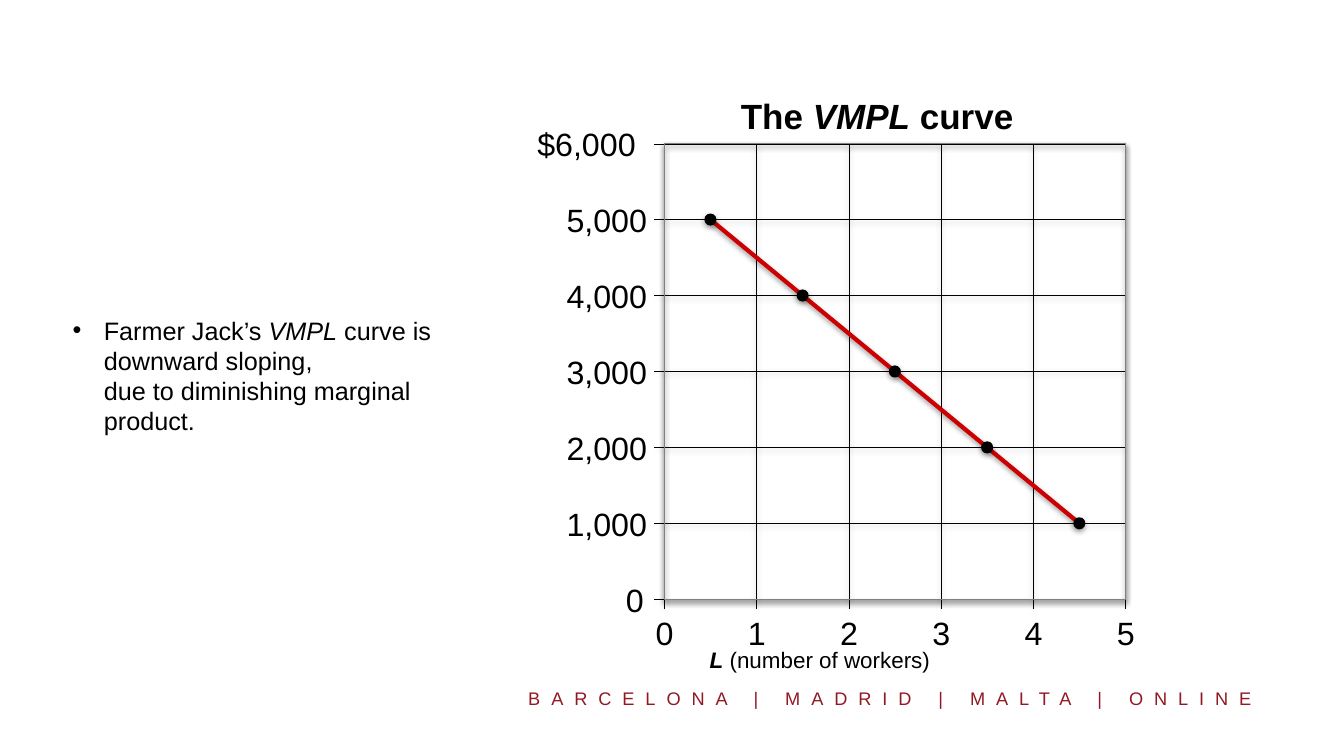
import pptx
import pptx.util
import pptx.dml.color
import pptx.enum.shapes
import pptx.enum.text
import pptx.oxml
import pptx.oxml.ns

Pt = pptx.util.Pt
SHAPE = pptx.enum.shapes.MSO_SHAPE
LEFT, TOP, WIDE, HIGH = 949, 205.2, 658.8, 650.9
COLS, ROWS, TICK, DOT = 5, 6, 14.4, 17.28

FOOT = ["BARCELONA | MADRID | MALTA | ONLINE"]
TITLE = ["The ", "*VMPL", " curve"]
AXIS = ["*L", " (number of workers)"]
NOTE = ["Farmer Jack’s ", "*VMPL", " curve is downward sloping, ", "\v",
        "due to diminishing marginal product."]
Y_TEXT = [("0", 894.2, 26.6), ("1,000", 809.3, 115.9), ("2,000", 809.3, 115.9),
          ("3,000", 809.3, 115.9), ("4,000", 809.3, 115.9),
          ("5,000", 809.3, 115.9), ("$6,000", 767.5, 157)]
X_TEXT = ["0", "1", "2", "3", "4", "5"]
DATA = [(0.5, 5000), (1.5, 4000), (2.5, 3000), (3.5, 2000), (4.5, 1000)]


def color(code):
    return pptx.dml.color.RGBColor.from_string(code)


def x_at(num):
    return LEFT + num * WIDE / COLS


def y_at(val):
    return TOP + HIGH * (1 - val / (ROWS * 1000))


def shade(item, alpha):
    props = item._element.spPr
    for old in props.findall(pptx.oxml.ns.qn("a:effectLst")):
        props.remove(old)
    props.append(pptx.oxml.parse_xml(
        f'<a:effectLst {pptx.oxml.ns.nsdecls("a")}>'
        '<a:outerShdw blurRad="101600" dist="50800" dir="5400000" rotWithShape="0">'
        f'<a:srgbClr val="000000"><a:alpha val="{alpha}000"/></a:srgbClr>'
        '</a:outerShdw></a:effectLst>'))


def line(slide, x1, y1, x2, y2, code="000000", width=0.25):
    item = slide.shapes.add_connector(
        pptx.enum.shapes.MSO_CONNECTOR.STRAIGHT, Pt(x1), Pt(y1), Pt(x2), Pt(y2))
    item.line.color.rgb = color(code)
    item.line.width = Pt(width)
    shade(item, 38)


def shape(slide, kind, x, y, w, h, fill=None, edge=None):
    item = slide.shapes.add_shape(kind, Pt(x), Pt(y), Pt(w), Pt(h))
    if fill:
        item.fill.solid()
        item.fill.fore_color.rgb = color(fill)
    else:
        item.fill.background()
    if edge:
        item.line.color.rgb = color(edge)
        item.line.width = Pt(2)
    else:
        item.line.fill.background()
    shade(item, 35)


def place(item, x, y, w, h):
    item.left, item.top, item.width, item.height = Pt(x), Pt(y), Pt(w), Pt(h)


def write(item, parts, size, bold=False, code="000000", pad=9.4, wrap=True):
    frame = item.text_frame
    frame.word_wrap = wrap
    frame.auto_size = pptx.enum.text.MSO_AUTO_SIZE.NONE
    frame.vertical_anchor = pptx.enum.text.MSO_ANCHOR.TOP
    frame.margin_left = frame.margin_right = Pt(pad)
    frame.margin_top = frame.margin_bottom = Pt(pad)
    para = frame.paragraphs[0]
    para.alignment = pptx.enum.text.PP_ALIGN.LEFT
    para.space_before = Pt(0)
    for part in parts:
        if part == "\v":
            para.add_line_break()
            continue
        run = para.add_run()
        run.text = part.lstrip("*")
        font = run.font
        font.name, font.size, font.bold = "Arial", Pt(size), bold
        font.italic = part.startswith("*")
        font.color.rgb = color(code)
    return para


def label(slide, text, x, y, w):
    box = slide.shapes.add_textbox(Pt(x), Pt(y), Pt(w), Pt(52.6))
    write(box, [text], 46, pad=0, wrap=False)


def grid(slide):
    shape(slide, SHAPE.RECTANGLE, LEFT, TOP, WIDE, HIGH, fill="FFFFFF")
    base, end = TOP + HIGH, LEFT + WIDE
    for row in range(ROWS + 1):
        y = y_at(row * 1000)
        line(slide, LEFT, y, end, y)
        line(slide, LEFT - TICK, y, LEFT, y)
    for col in range(COLS + 1):
        x = x_at(col)
        line(slide, x, TOP, x, base)
        line(slide, x, base + TICK, x, base)
    shape(slide, SHAPE.RECTANGLE, LEFT, TOP, WIDE, HIGH, edge="808080")


def curve(slide):
    spots = [(x_at(num), y_at(val)) for num, val in DATA]
    line(slide, *spots[0], *spots[-1], "CC0000", 6)
    for x, y in spots:
        shape(slide, SHAPE.OVAL, x - DOT / 2, y - DOT / 2, DOT, DOT, fill="000000")


def main():
    deck = pptx.Presentation()
    deck.slide_width, deck.slide_height = Pt(1920), Pt(1080)
    slide = deck.slides.add_slide(deck.slide_layouts[1])

    title, body = slide.placeholders
    place(title, 1049, 125.3, 446.4, 75.6)
    write(title, TITLE, 50, bold=True)

    place(body, 94.3, 440.6, 545, 231.1)
    para = write(body, NOTE, 36)
    props = para._p.get_or_add_pPr()
    props.set("marL", str(Pt(44.64)))
    props.set("indent", str(-Pt(44.64)))
    props.append(pptx.oxml.parse_xml(
        f'<a:buChar {pptx.oxml.ns.nsdecls("a")} char="•"/>'))
    para.font.size = Pt(36)

    grid(slide)
    curve(slide)
    for row, (text, x, w) in enumerate(Y_TEXT):
        label(slide, text, x, y_at(row * 1000) - 27.5, w)
    for col, text in enumerate(X_TEXT):
        label(slide, text, x_at(col) - 12.3, 876.2, 26.6)

    axis = slide.shapes.add_textbox(Pt(1004.4), Pt(913.7), Pt(586.8), Pt(55.4))
    para = write(axis, AXIS, 32)
    para.runs[0].font.bold = True

    foot = slide.shapes.add_textbox(Pt(745.2), Pt(972), Pt(1069.2), Pt(49.7))
    para = write(foot, FOOT, 26, code="921824", wrap=False)
    para.runs[0]._r.get_or_add_rPr().set("spc", "1560")

    deck.save("out.pptx")


if __name__ == "__main__":
    main()
